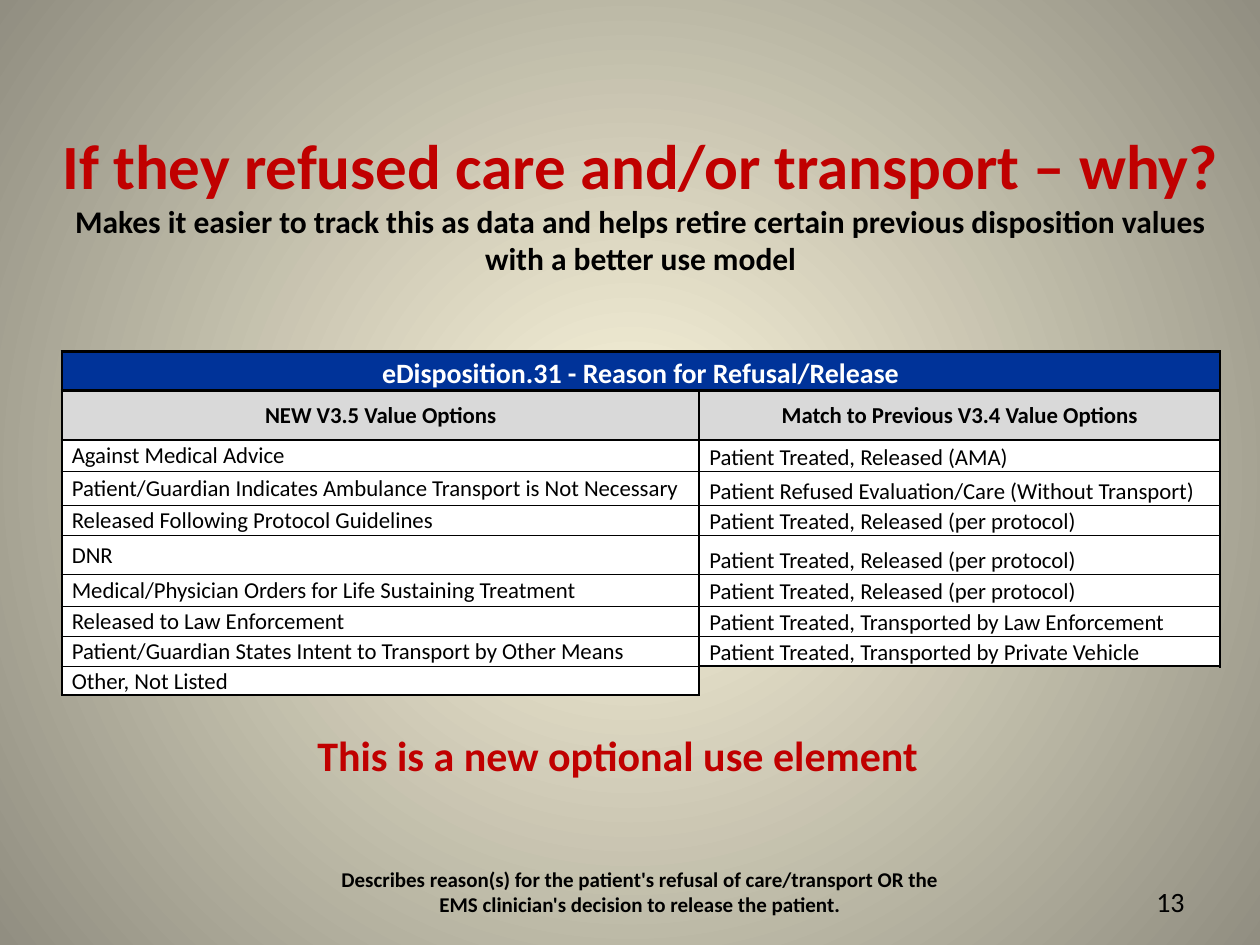
from lxml import etree
from pptx import Presentation
from pptx.dml.color import RGBColor
from pptx.enum.dml import MSO_LINE
from pptx.enum.text import MSO_ANCHOR, MSO_AUTO_SIZE, PP_ALIGN
from pptx.oxml.ns import qn
from pptx.util import Inches, Pt

FONT = "Calibri"
BLACK, WHITE, RED, NAVY, GRAY = "000000", "FFFFFF", "C00000", "003399", "D9D9D9"
THICK, THIN = 1.5, 0.5

TABLE_TITLE = "eDisposition.31 - Reason for Refusal/Release"
HEADINGS = ("NEW V3.5 Value Options", "Match to Previous V3.4 Value Options")
BY_PROTOCOL = "Patient Treated, Released (per protocol)"
VALUE_PAIRS = [
    ("Against Medical Advice", "Patient Treated, Released (AMA)"),
    ("Patient/Guardian Indicates Ambulance Transport is Not Necessary",
     "Patient Refused Evaluation/Care (Without Transport)"),
    ("Released Following Protocol Guidelines", BY_PROTOCOL),
    ("DNR", BY_PROTOCOL),
    ("Medical/Physician Orders for Life Sustaining Treatment", BY_PROTOCOL),
    ("Released to Law Enforcement", "Patient Treated, Transported by Law Enforcement"),
    ("Patient/Guardian States Intent to Transport by Other Means",
     "Patient Treated, Transported by Private Vehicle"),
    ("Other, Not Listed", None),
]
COLUMN_WIDTHS = (5.06, 4.13)
ROW_HEIGHTS = (0.31, 0.39, 0.25, 0.27, 0.24, 0.31, 0.25, 0.24, 0.24, 0.22)


def color(hex_value):
    return RGBColor.from_string(hex_value)


def add_run(paragraph, text, size, hex_value, bold=False):
    run = paragraph.add_run()
    run.text = text
    run.font.name = FONT
    run.font.size = Pt(size)
    run.font.bold = bold
    run.font.color.rgb = color(hex_value)


def paint_background(slide):
    fill = slide.background.fill
    fill.gradient()
    for stop, (position, hex_value) in zip(fill.gradient_stops, [(0, "FCF7DD"), (1, "918E81")]):
        stop.position = position
        stop.color.rgb = color(hex_value)
    # Turn the linear gradient into a circular one around the centre
    gradient = slide.background._cSld.find(".//" + qn("a:gradFill"))
    gradient.remove(gradient.find(qn("a:lin")))
    circle = etree.SubElement(gradient, qn("a:path"), path="circle")
    etree.SubElement(circle, qn("a:fillToRect"), l="50000", t="50000", r="50000", b="50000")


def add_title(slide):
    title = slide.shapes.title
    title.left, title.top, title.width, title.height = map(Inches, (0.25, 1, 9.67, 1.2))
    frame = title.text_frame
    frame.auto_size = MSO_AUTO_SIZE.NONE
    frame.vertical_anchor = MSO_ANCHOR.MIDDLE
    paragraph = frame.paragraphs[0]
    paragraph.alignment = PP_ALIGN.CENTER
    add_run(paragraph, "If they refused care and/or transport – why?", 36, RED, True)
    paragraph.add_line_break()
    add_run(paragraph, "Makes it easier to track this as data and helps retire certain "
            "previous disposition values with a better use model", 18, BLACK, True)


def add_note(slide, place, text, size, hex_value, bold=True,
             align=PP_ALIGN.LEFT, anchor=MSO_ANCHOR.TOP):
    frame = slide.shapes.add_textbox(*map(Inches, place)).text_frame
    frame.word_wrap = True
    frame.auto_size = MSO_AUTO_SIZE.SHAPE_TO_FIT_TEXT
    frame.vertical_anchor = anchor
    paragraph = frame.paragraphs[0]
    paragraph.alignment = align
    add_run(paragraph, text, size, hex_value, bold)


def set_borders(cell, left=THICK, right=THICK, top=THICK, bottom=THICK):
    properties = cell._tc.get_or_add_tcPr()
    sides = zip("LRTB", (left, right, top, bottom))
    # Border lines must come before the cell fill
    for index, (side, width) in enumerate(sides):
        line = etree.Element(qn(f"a:ln{side}"), w=str(Pt(width)))
        if width:
            solid = etree.SubElement(line, qn("a:solidFill"))
            etree.SubElement(solid, qn("a:srgbClr"), val=BLACK)
            etree.SubElement(line, qn("a:prstDash"), val="solid")
        else:
            etree.SubElement(line, qn("a:noFill"))
        properties.insert(index, line)


def fill_cell(cell, text, fill, size=13, hex_value=BLACK, bold=False,
              align=PP_ALIGN.LEFT, anchor=MSO_ANCHOR.MIDDLE, indent=0.01):
    cell.fill.solid()
    cell.fill.fore_color.rgb = color(fill)
    cell.vertical_anchor = anchor
    cell.margin_left = Inches(indent)
    cell.margin_right = cell.margin_top = Inches(0.01)
    cell.margin_bottom = 0
    paragraph = cell.text_frame.paragraphs[0]
    paragraph.alignment = align
    add_run(paragraph, text, size, hex_value, bold)


def add_value_table(slide):
    table = slide.shapes.add_table(len(ROW_HEIGHTS), 2, Inches(0.49), Inches(2.79),
                                   Inches(sum(COLUMN_WIDTHS)), Inches(sum(ROW_HEIGHTS))).table
    table.first_row = table.horz_banding = False
    for column, width in zip(table.columns, COLUMN_WIDTHS):
        column.width = Inches(width)
    for row, height in zip(table.rows, ROW_HEIGHTS):
        row.height = Inches(height)

    # Title row and column headings
    table.cell(0, 0).merge(table.cell(0, 1))
    fill_cell(table.cell(0, 0), TABLE_TITLE, NAVY, 16, WHITE, True,
              PP_ALIGN.CENTER, MSO_ANCHOR.BOTTOM)
    for column, heading in enumerate(HEADINGS):
        set_borders(table.cell(0, column))
        fill_cell(table.cell(1, column), heading, GRAY, bold=True, align=PP_ALIGN.CENTER)
        set_borders(table.cell(1, column))

    # Values: thin rules inside, a thick outline around each column
    anchors = (MSO_ANCHOR.MIDDLE, MSO_ANCHOR.BOTTOM)
    for column, values in enumerate(zip(*VALUE_PAIRS)):
        last = max(i for i, value in enumerate(values) if value)
        for index, value in enumerate(values):
            cell = table.cell(index + 2, column)
            if value is None:
                cell.fill.background()
                cell.margin_top = cell.margin_bottom = 0
                cell.text_frame.paragraphs[0].font.size = Pt(13)
                set_borders(cell, right=0, bottom=0)
                continue
            fill_cell(cell, value, WHITE, anchor=anchors[column], indent=0.08)
            set_borders(cell, top=THICK if index == 0 else THIN,
                        bottom=THICK if index == last else THIN)


def main():
    presentation = Presentation()
    presentation.slide_width, presentation.slide_height = Inches(10), Inches(7.5)
    slide = presentation.slides.add_slide(presentation.slide_layouts[5])
    paint_background(slide)

    # Slide number, title and remark
    add_note(slide, (7.17, 6.97, 2.33, 0.37), "13", 16, BLACK, False,
             PP_ALIGN.RIGHT, MSO_ANCHOR.MIDDLE)
    add_title(slide)
    add_note(slide, (2.42, 5.74, 5, 0.5), "This is a new optional use element", 24, RED)

    # Table and the definition below it
    add_value_table(slide)
    add_note(slide, (2.58, 6.83, 5, 0.5),
             "Describes reason(s) for the patient's refusal of care/transport OR the "
             "EMS clinician's decision to release the patient.",
             12, BLACK, align=PP_ALIGN.CENTER)
    presentation.save("out.pptx")


if __name__ == "__main__":
    main()
